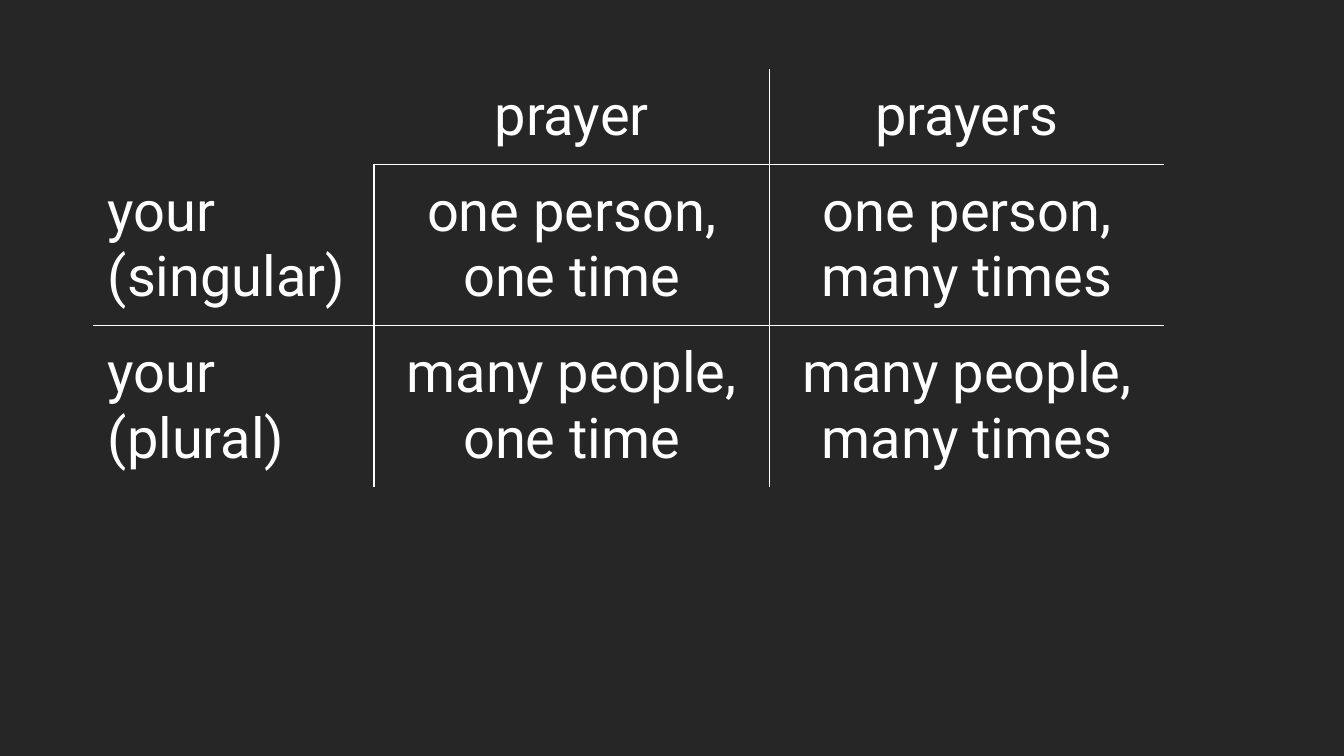
from dataclasses import dataclass

from lxml.etree import SubElement
from pptx import Presentation
from pptx.dml.color import RGBColor
from pptx.enum.text import MSO_ANCHOR, PP_ALIGN
from pptx.oxml.ns import qn
from pptx.table import Table, _Cell
from pptx.util import Inches, Pt

HUES = {"back": "262626", "ink": "FFFFFF"}
FONT = {"name": "Roboto", "size": Pt(40)}
PAD = Inches(0.15)
FRAME = {
    "margin_left": PAD,
    "margin_right": PAD,
    "margin_top": PAD,
    "margin_bottom": PAD,
    "vertical_anchor": MSO_ANCHOR.TOP,
}
WIDTHS = [2.79, 3.92, 3.92]
HEIGHTS = [0.94, 1.6, 1.6]


@dataclass
class Entry:
    row: int
    col: int
    text: str

    def sides(self) -> set[str]:
        """Inner rules only, with the top left corner left open."""
        row, col = self.row, self.col
        tests = {
            "L": col > 1 or (col == 1 and row > 0),
            "R": col < 2 and (row, col) != (0, 0),
            "T": row > 1 or (row == 1 and col > 0),
            "B": row < 2 and (row, col) != (0, 0),
        }
        return {side for side, drawn in tests.items() if drawn}


TEXTS = [
    ["", "prayer", "prayers"],
    ["your\n(singular)", "one person,\none time", "one person,\nmany times"],
    ["your\n(plural)", "many people,\none time", "many people,\nmany times"],
]
ENTRIES = [
    Entry(row, col, text)
    for row, line in enumerate(TEXTS)
    for col, text in enumerate(line)
]


def rule(cell: _Cell, sides: set[str]) -> None:
    props = cell._tc.get_or_add_tcPr()
    for side in "LRTB":
        line = SubElement(props, qn(f"a:ln{side}"), w=str(Pt(1)))
        if side in sides:
            fill = SubElement(line, qn("a:solidFill"))
            SubElement(fill, qn("a:srgbClr"), val=HUES["ink"])
        else:
            SubElement(line, qn("a:noFill"))


def write(table: Table, entry: Entry) -> None:
    cell = table.cell(entry.row, entry.col)
    for name, value in FRAME.items():
        setattr(cell, name, value)
    rule(cell, entry.sides())
    cell.fill.background()

    para = cell.text_frame.paragraphs[0]
    para.text = entry.text
    para.alignment = PP_ALIGN.CENTER if entry.col else PP_ALIGN.LEFT
    for run in para.runs:
        for name, value in FONT.items():
            setattr(run.font, name, value)
        run.font.color.rgb = RGBColor.from_string(HUES["ink"])


def main() -> None:
    deck = Presentation()
    deck.slide_width, deck.slide_height = Inches(13.33), Inches(7.5)
    slide = deck.slides.add_slide(deck.slide_layouts[6])

    # Dark background
    fill = slide.background.fill
    fill.solid()
    fill.fore_color.rgb = RGBColor.from_string(HUES["back"])

    # Table grid
    table = slide.shapes.add_table(
        len(HEIGHTS), len(WIDTHS), Inches(0.92), Inches(0.68),
        Inches(sum(WIDTHS)), Inches(sum(HEIGHTS)),
    ).table
    table.first_row = table.horz_banding = False
    for col, width in zip(table.columns, WIDTHS):
        col.width = Inches(width)
    for row, height in zip(table.rows, HEIGHTS):
        row.height = Inches(height)

    # Cell texts and rules
    for entry in ENTRIES:
        write(table, entry)

    deck.save("out.pptx")


if __name__ == "__main__":
    main()
